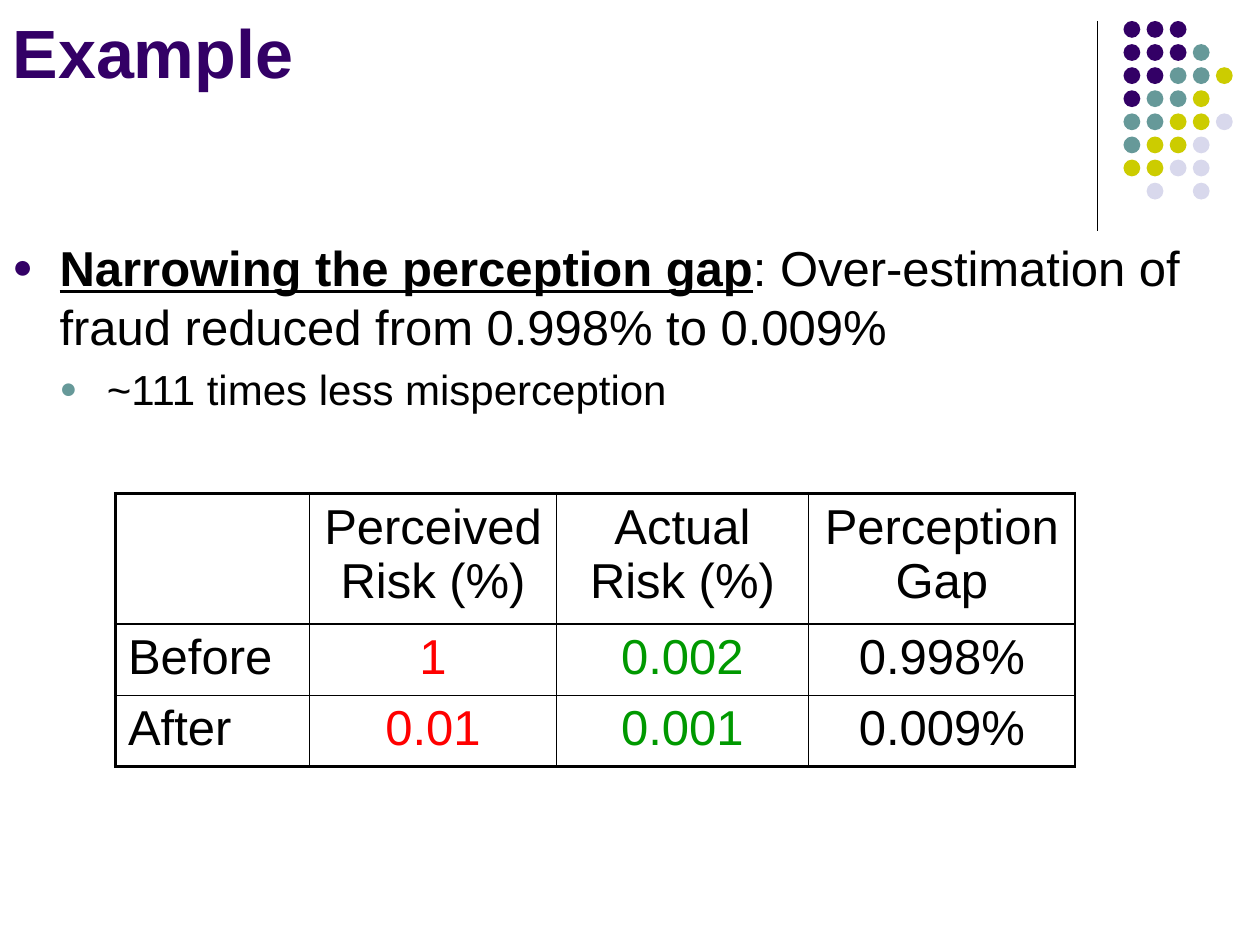
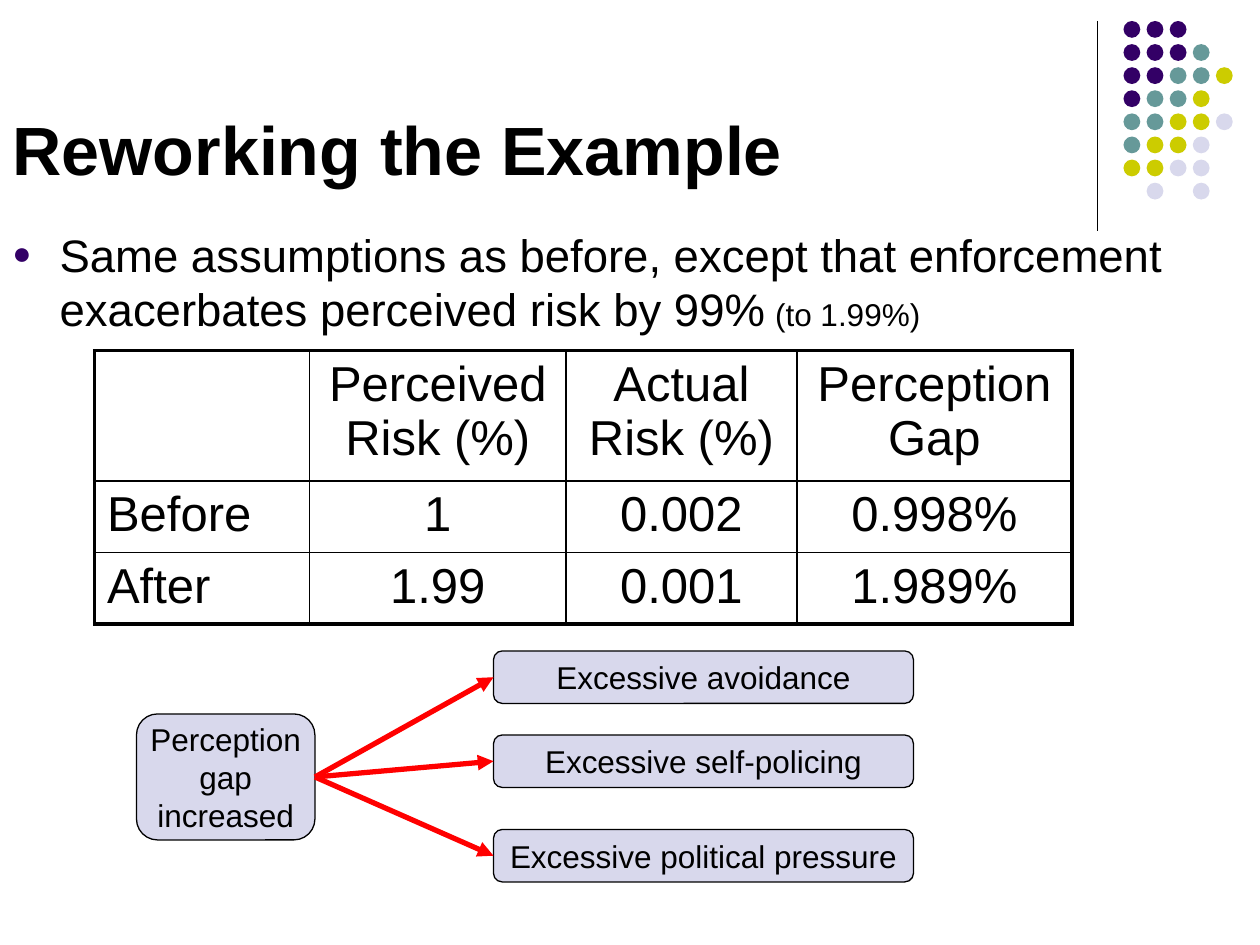
from lxml import etree
from pptx import Presentation, util as u
from pptx.dml.color import RGBColor
from pptx.enum import shapes, text
from pptx.oxml import ns

# Shared look: a grid of 120 columns by 90 rows
CELL = u.Inches(10) // 120
FONT = "Arial"
COLORS = {
    "purple": "330066", "teal": "669999", "olive": "CCCC00", "lavender": "D8D8EC",
    "black": "000000", "red": "FF0000", "green": "009900",
}
DOT_COLORS = {"P": "purple", "T": "teal", "Y": "olive", "L": "lavender"}
DOT_ROWS = ["PPP", "PPPT", "PPTTY", "PTTY", "TTYYL", "TYYL", "YYLL", " L L"]
DOT_PITCH, DOT_SIZE = 2.2, 1.6
INDENT = 4.5
THIN, THICK = 1, 2.25
HEADINGS = ["", "Perceived Risk (%)", "Actual Risk (%)", "Perception Gap"]
ROW_HEIGHTS = [11.6, 6.5, 6.5]


def grid(*cells):
    return [u.Emu(round(n * CELL)) for n in cells]


def rgb(name):
    return RGBColor.from_string(COLORS[name])


def set_all(target, **values):
    for key, value in values.items():
        setattr(target, key, value)


def add_run(paragraph, words, size, color="black", **style):
    run = paragraph.add_run()
    run.text = words
    set_all(run.font, name=FONT, size=u.Pt(size), **style)
    run.font.color.rgb = rgb(color)


def add_xml(parent, tag, position=None, **attributes):
    child = etree.Element(ns.qn(tag), {k: str(v) for k, v in attributes.items()})
    parent.insert(len(parent) if position is None else position, child)
    return child


# Parts found on both slides
def add_line(slide, start, end, color, weight):
    line = slide.shapes.add_connector(
        shapes.MSO_CONNECTOR.STRAIGHT, *grid(*start, *end))
    line.line.color.rgb = rgb(color)
    line.line.width = u.Pt(weight)
    add_xml(line._element.spPr, "a:effectLst")
    return line


def add_dots(slide):
    add_line(slide, (104.5, 2), (104.5, 22), "black", 0.75)
    dots = slide.shapes.add_group_shape()
    for row, letters in enumerate(DOT_ROWS):
        for column, letter in enumerate(letters):
            if letter == " ":
                continue
            dot = dots.shapes.add_shape(
                shapes.MSO_SHAPE.OVAL,
                *grid(107 + column * DOT_PITCH, 2 + row * DOT_PITCH, DOT_SIZE, DOT_SIZE))
            dot.shadow.inherit = False
            dot.fill.solid()
            dot.fill.fore_color.rgb = rgb(DOT_COLORS[letter])
            dot.line.fill.background()


def start_slide(deck, heading, height, color, **frame_format):
    slide = deck.slides.add_slide(deck.slide_layouts[5])
    add_dots(slide)
    title = slide.shapes.title
    left, top, width, height = grid(0, 0, 120, height)
    set_all(title, left=left, top=top, width=width, height=height)
    set_all(title.text_frame, auto_size=text.MSO_AUTO_SIZE.NONE, word_wrap=True,
            **frame_format)
    paragraph = title.text_frame.paragraphs[0]
    paragraph.alignment = text.PP_ALIGN.LEFT
    add_run(paragraph, heading, 39, color, bold=True)
    return slide


def add_bullets(slide, top, height, points):
    """Each point is (level, [(words, size, style), ...])."""
    frame = slide.shapes.add_textbox(*grid(0, top, 120, height)).text_frame
    frame.word_wrap = True
    for number, (level, runs) in enumerate(points):
        paragraph = frame.add_paragraph() if number else frame.paragraphs[0]
        set_all(paragraph, level=level, space_before=u.Pt(runs[0][1] * 0.2))
        properties = paragraph._p.get_or_add_pPr()
        hang, = grid(INDENT)
        properties.set("marL", str(hang * (level + 1)))
        properties.set("indent", str(-hang))
        bullet_color = add_xml(properties, "a:buClr")
        add_xml(bullet_color, "a:srgbClr", val=COLORS[("purple", "teal")[level]])
        add_xml(properties, "a:buSzPct", val=70000)
        add_xml(properties, "a:buFont", typeface=FONT)
        add_xml(properties, "a:buChar", char="●")
        for words, size, style in runs:
            add_run(paragraph, words, size, **style)


def set_borders(cell, weights):
    """Weights run left, right, top, bottom."""
    properties = cell._tc.get_or_add_tcPr()
    for position, (side, weight) in enumerate(zip("LRTB", weights)):
        line = add_xml(properties, f"a:ln{side}", position, w=u.Pt(weight))
        add_xml(add_xml(line, "a:solidFill"), "a:srgbClr", val=COLORS["black"])


def add_risk_table(slide, corner, widths, records, column_colors, right_edge):
    rows = [HEADINGS] + records
    table = slide.shapes.add_table(
        len(rows), len(widths), *grid(*corner, sum(widths), sum(ROW_HEIGHTS))).table
    set_all(table, first_row=False, horz_banding=False)
    for column, width in zip(table.columns, grid(*widths)):
        column.width = width
    for row, height in zip(table.rows, grid(*ROW_HEIGHTS)):
        row.height = height
    last_row, last_column = len(rows) - 1, len(widths) - 1
    for r, values in enumerate(rows):
        for c, value in enumerate(values):
            cell = table.cell(r, c)
            cell.fill.background()
            set_borders(cell, [THIN if c else THICK,
                               right_edge if c == last_column else THIN,
                               THIN if r else THICK,
                               THICK if r == last_row else THIN])
            paragraph = cell.text_frame.paragraphs[0]
            paragraph.alignment = text.PP_ALIGN.CENTER if c else text.PP_ALIGN.LEFT
            add_run(paragraph, value, 28, column_colors[c] if r else "black")


# Cause and effects diagram
def add_box(slide, words, *place):
    box = slide.shapes.add_shape(shapes.MSO_SHAPE.ROUNDED_RECTANGLE, *grid(*place))
    box.shadow.inherit = False
    box.fill.solid()
    box.fill.fore_color.rgb = rgb("lavender")
    box.line.color.rgb = rgb("black")
    box.line.width = u.Pt(0.75)
    margin, = grid(0.6)
    set_all(box.text_frame, word_wrap=True, margin_left=margin, margin_right=margin,
            vertical_anchor=text.MSO_ANCHOR.MIDDLE)
    paragraph = box.text_frame.paragraphs[0]
    paragraph.alignment = text.PP_ALIGN.CENTER
    add_run(paragraph, words, 18)
    return box


def add_arrow(slide, cause, effect):
    arrow = add_line(slide, (0, 0), (1, 1), "red", 3)
    arrow.begin_connect(cause, 3)
    arrow.end_connect(effect, 1)
    add_xml(arrow.line._get_or_add_ln(), "a:tailEnd", type="triangle")


def build_example(deck):
    slide = start_slide(deck, "Example", 16, "purple", margin_top=u.Inches(0.08),
                        vertical_anchor=text.MSO_ANCHOR.TOP)
    add_bullets(slide, 22, 19, [
        (0, [("Narrowing the perception gap", 28, {"bold": True, "underline": True}),
             (": Over-estimation of fraud reduced from 0.998% to 0.009%", 28, {})]),
        (1, [("~111 times less misperception", 24, {})]),
    ])
    add_risk_table(slide, (11, 47), [18.5, 23.5, 24, 25.4],
                   [["Before", "1", "0.002", "0.998%"],
                    ["After", "0.01", "0.001", "0.009%"]],
                   ["black", "red", "green", "black"], THIN)


def build_reworking(deck):
    slide = start_slide(deck, "Reworking the Example", 18.6, "black",
                        vertical_anchor=text.MSO_ANCHOR.BOTTOM)
    add_bullets(slide, 21, 12, [
        (0, [("Same assumptions as before, except that enforcement "
              "exacerbates perceived risk by 99%", 26, {}),
             (" (to 1.99%)", 18, {})]),
    ])
    add_risk_table(slide, (9, 33.4), [20.5, 24.4, 22, 26.2],
                   [["Before", "1", "0.002", "0.998%"],
                    ["After", "1.99", "0.001", "1.989%"]],
                   ["black"] * 4, THICK)
    cause = add_box(slide, "Perception gap increased", 13, 68, 17, 12)
    effects = {"Excessive avoidance": 62, "Excessive self-policing": 70,
               "Excessive political pressure": 79}
    for words, top in effects.items():
        add_arrow(slide, cause, add_box(slide, words, 47, top, 40, 5))


def main():
    deck = Presentation()
    deck.slide_width, deck.slide_height = grid(120, 90)
    build_example(deck)
    build_reworking(deck)
    deck.save("out.pptx")


if __name__ == "__main__":
    main()
